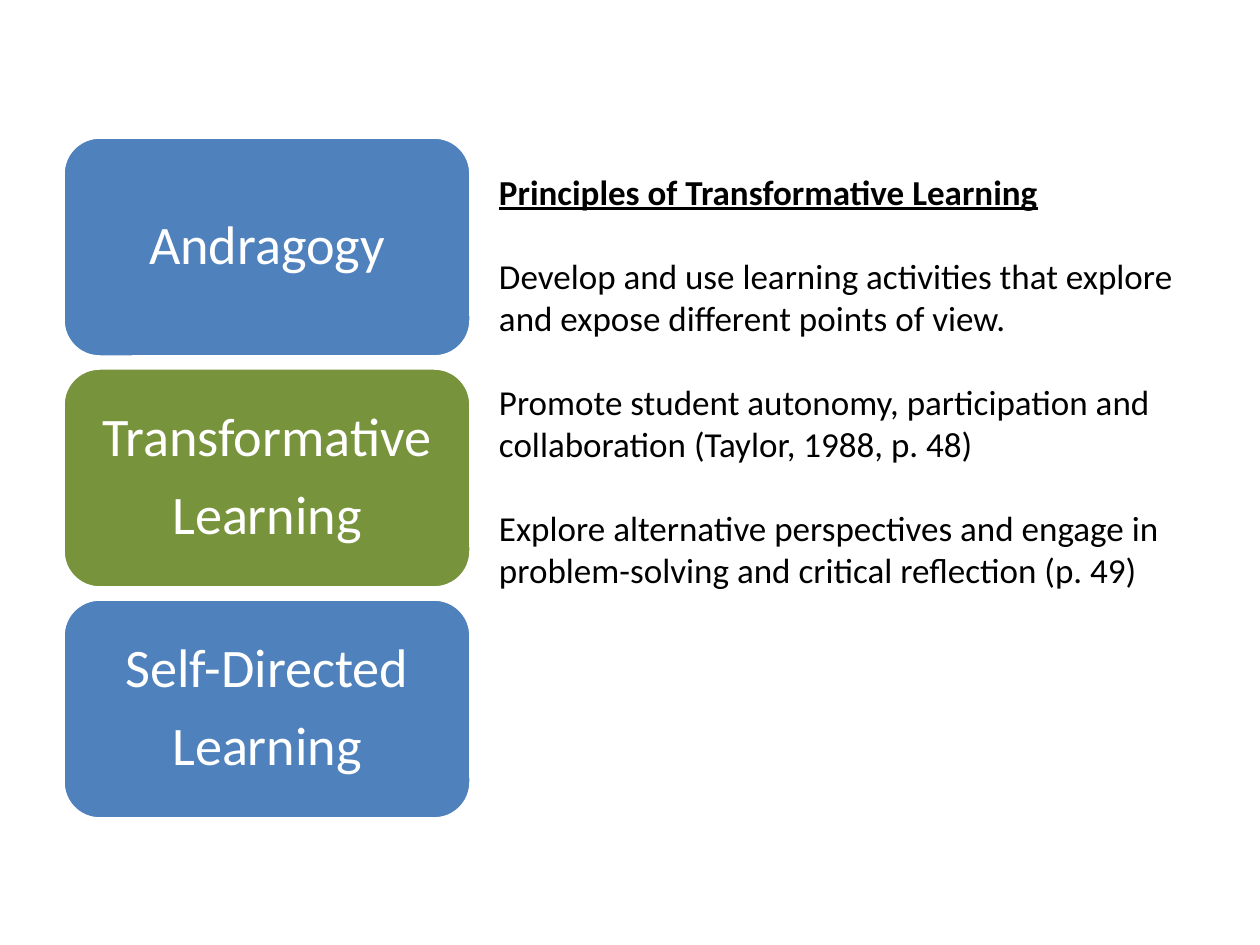
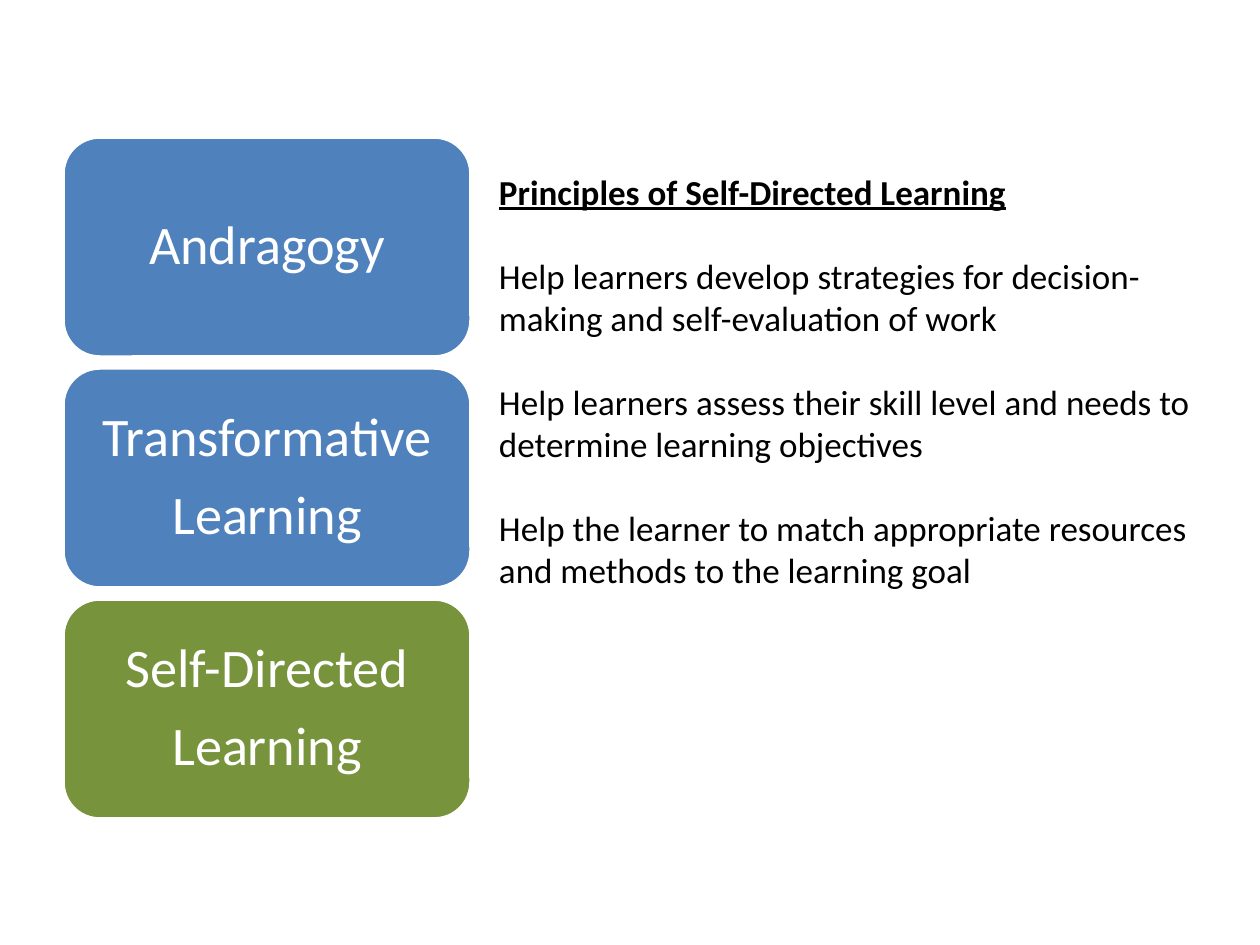
import pptx
import pptx.dml.color
import pptx.enum.shapes
import pptx.enum.text
import pptx.util

EMU_PER_PX = 914400 // 126
FONT = "Calibri"
BLUE, GREEN, WHITE, BLACK = "4F81BD", "77933C", "FFFFFF", "000000"

THEORIES = [
    ["Andragogy"],
    ["Transformative", "Learning"],
    ["Self-Directed", "Learning"],
]
THEORY_LEFT, THEORY_TOP = 63, 137
THEORY_WIDTH, THEORY_HEIGHT, THEORY_PITCH = 408, 220, 231

# Each slide: index of the highlighted theory, heading, principles
SLIDES = [
    (1, "Principles of Transformative Learning", [
        "Develop and use learning activities that explore and expose different points of view.",
        "Promote student autonomy, participation and collaboration (Taylor, 1988, p. 48)",
        "Explore alternative perspectives and engage in problem-solving and critical reflection (p. 49)",
    ]),
    (2, "Principles of Self-Directed Learning", [
        "Help learners develop strategies for decision-making and self-evaluation of work",
        "Help learners assess their skill level and needs to determine learning objectives",
        "Help the learner to match appropriate resources and methods to the learning goal",
    ]),
]


def px(length):
    return pptx.util.Emu(length * EMU_PER_PX)


def color(hex_string):
    return pptx.dml.color.RGBColor.from_string(hex_string)


def write_text(frame, lines, size, text_color, margins):
    """Fill a wrapped frame; margins are left, top, right, bottom in px."""
    frame.word_wrap = True
    (frame.margin_left, frame.margin_top,
     frame.margin_right, frame.margin_bottom) = map(px, margins)
    frame.text = "\n".join(lines)
    for paragraph in frame.paragraphs:
        for run in paragraph.runs:
            run.font.name = FONT
            run.font.size = pptx.util.Pt(size)
            run.font.color.rgb = color(text_color)


def add_theory(slide, row, lines, fill):
    theory = slide.shapes.add_shape(
        pptx.enum.shapes.MSO_SHAPE.ROUNDED_RECTANGLE,
        px(THEORY_LEFT), px(THEORY_TOP + row * THEORY_PITCH),
        px(THEORY_WIDTH), px(THEORY_HEIGHT))
    theory.shadow.inherit = False
    theory.fill.solid()
    theory.fill.fore_color.rgb = color(fill)
    theory.line.color.rgb = color(WHITE)
    theory.line.width = pptx.util.Pt(2)
    frame = theory.text_frame
    frame.vertical_anchor = pptx.enum.text.MSO_ANCHOR.MIDDLE
    write_text(frame, lines, 31, WHITE, (16, 8, 16, 8))
    for paragraph in frame.paragraphs:
        paragraph.alignment = pptx.enum.text.PP_ALIGN.CENTER
        paragraph.line_spacing = 0.9
        paragraph.space_after = pptx.util.Pt(10.85)


def add_principles(slide, heading, principles):
    box = slide.shapes.add_textbox(px(493), px(159), px(726), px(639))
    frame = box.text_frame
    write_text(frame, [heading, *principles], 20, BLACK, (6, 11, 15, 11))
    title, *statements = frame.paragraphs
    title.runs[0].font.bold = True
    title.runs[0].font.underline = True
    for statement in statements:
        statement.space_before = pptx.util.Pt(24)


def main():
    deck = pptx.Presentation()
    deck.slide_width, deck.slide_height = px(1260), px(945)
    for highlighted, heading, principles in SLIDES:
        slide = deck.slides.add_slide(deck.slide_layouts[6])
        add_principles(slide, heading, principles)
        for row, lines in enumerate(THEORIES):
            add_theory(slide, row, lines, GREEN if row == highlighted else BLUE)
    deck.save("out.pptx")


if __name__ == "__main__":
    main()
